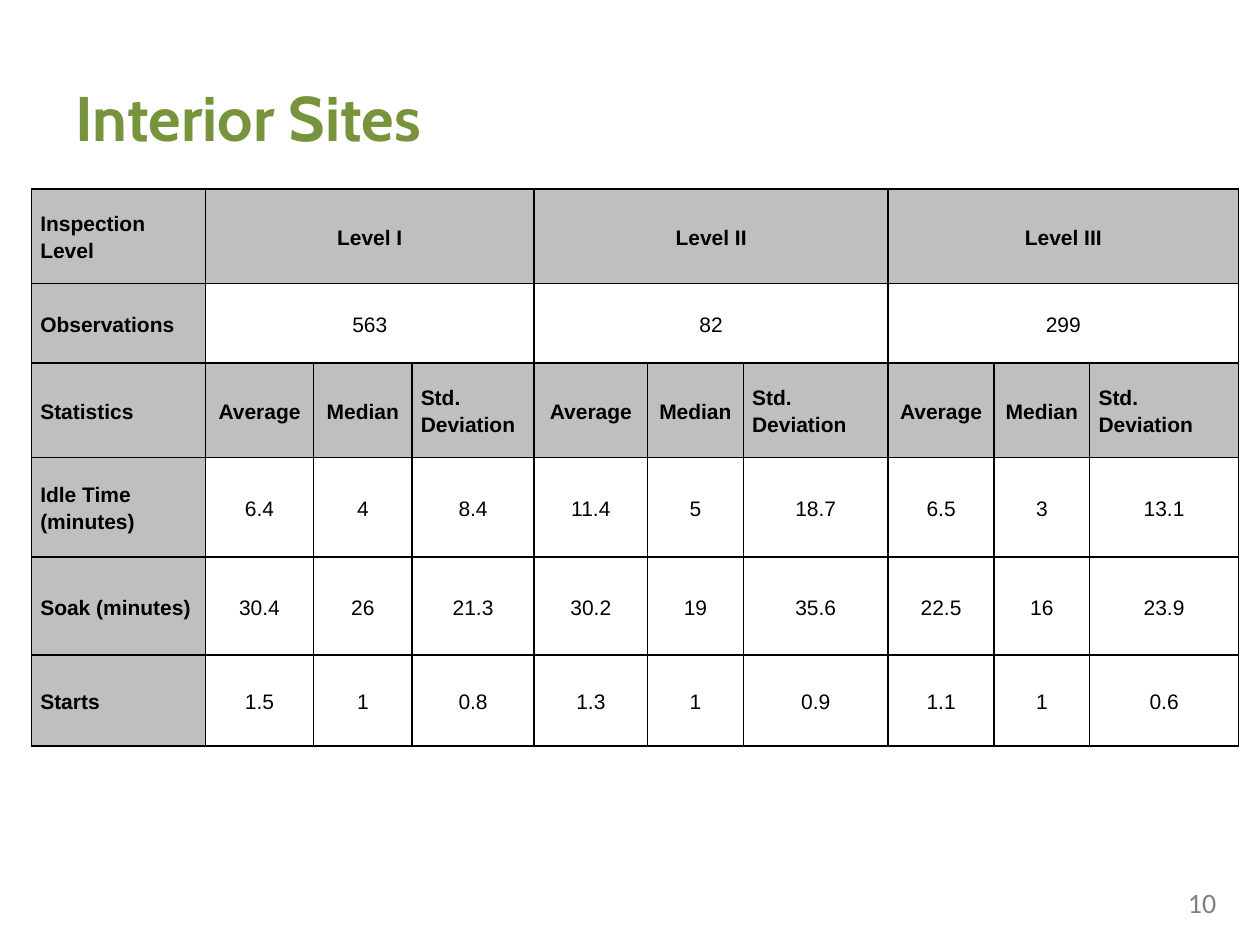
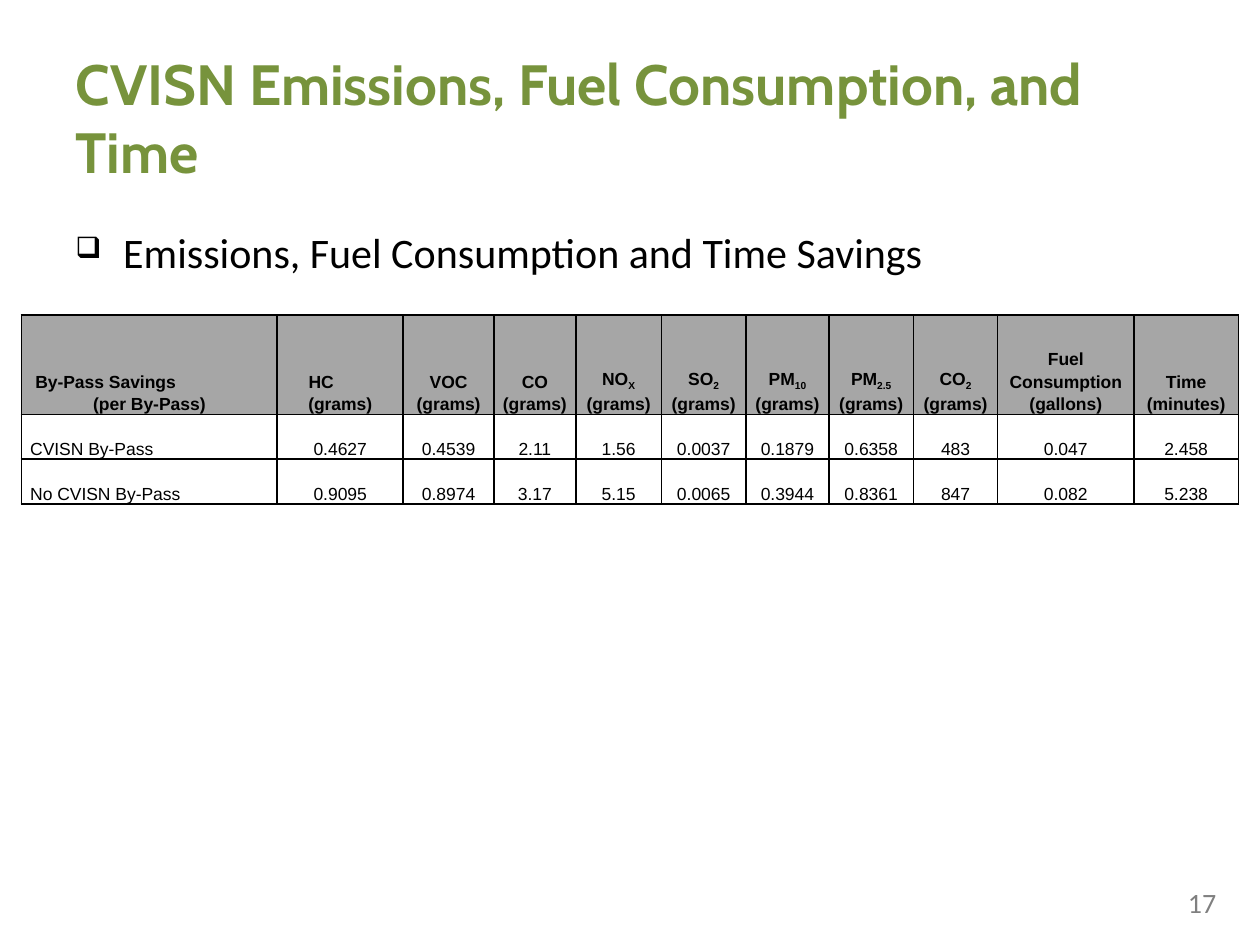
from lxml import etree
from pptx import Presentation
from pptx.dml.color import RGBColor
from pptx.enum.text import MSO_ANCHOR, MSO_AUTO_SIZE, PP_ALIGN
from pptx.oxml.ns import qn
from pptx.util import Inches, Pt

LEFT, CENTER = PP_ALIGN.LEFT, PP_ALIGN.CENTER
MIDDLE, BOTTOM = MSO_ANCHOR.MIDDLE, MSO_ANCHOR.BOTTOM
NO_FIT, GROW = MSO_AUTO_SIZE.NONE, MSO_AUTO_SIZE.SHAPE_TO_FIT_TEXT

GREEN = RGBColor(0x77, 0x93, 0x3C)
BLACK = RGBColor(0x00, 0x00, 0x00)
PAGE_GRAY = RGBColor(0x80, 0x80, 0x80)
LIGHT_GRAY = RGBColor(0xBF, 0xBF, 0xBF)
MID_GRAY = RGBColor(0xA6, 0xA6, 0xA6)

TITLE_FONT, BODY_FONT, TABLE_FONT = "Cabin", "Calibri", "Arial"
SLIDE_WIDTH, SLIDE_HEIGHT = Inches(10), Inches(7.5)
GRID_COLUMNS, GRID_ROWS = 100, 75
TITLE_ONLY = 5
CELL_PADDING = Inches(0.07)


def across(columns):
    return round(SLIDE_WIDTH * columns / GRID_COLUMNS)


def down(rows):
    return round(SLIDE_HEIGHT * rows / GRID_ROWS)


def area(left, top, width, height):
    return across(left), down(top), across(width), down(height)


def style_font(font, name, size, color, bold=False):
    font.name = name
    font.size = Pt(size)
    font.color.rgb = color
    font.bold = bold


def add_label(slide, place, text, size, color):
    label = slide.shapes.add_textbox(*area(*place))
    paragraph = label.text_frame.paragraphs[0]
    paragraph.text = text
    style_font(paragraph.runs[0].font, BODY_FONT, size, color)
    return label


def add_titled_slide(deck, heading, heading_size, page):
    slide = deck.slides.add_slide(deck.slide_layouts[TITLE_ONLY])
    title = slide.shapes.title
    title.left, title.top, title.width, title.height = area(5, 3, 90, 12.5)
    frame = title.text_frame
    frame.text = heading
    frame.auto_size = NO_FIT
    frame.vertical_anchor = MIDDLE
    frame.paragraphs[0].alignment = LEFT
    style_font(frame.paragraphs[0].runs[0].font, TITLE_FONT, heading_size, GREEN, True)
    number = add_label(slide, (93.3, 69.8, 5, 3.7), page, 16, PAGE_GRAY)
    number.text_frame.word_wrap = False
    number.text_frame.auto_size = GROW
    return slide


def set_indent(paragraph, margin, first_line=0):
    properties = paragraph._p.get_or_add_pPr()
    properties.set("marL", str(Inches(margin)))
    properties.set("indent", str(Inches(first_line)))
    return properties


def add_bullet(slide, place, text):
    statement = add_label(slide, place, text, 24, BLACK)
    statement.text_frame.word_wrap = True
    properties = set_indent(statement.text_frame.paragraphs[0], 0.38, -0.38)
    etree.SubElement(properties, qn("a:buSzPct")).set("val", "70000")
    etree.SubElement(properties, qn("a:buChar")).set("char", "❑")


def add_borders(cell):
    properties = cell._tc.get_or_add_tcPr()
    for side in ("lnL", "lnR", "lnT", "lnB"):
        border = etree.SubElement(properties, qn(f"a:{side}"), w=str(Pt(1)))
        fill = etree.SubElement(border, qn("a:solidFill"))
        etree.SubElement(fill, qn("a:srgbClr"), val=str(BLACK))


def write_with_subscripts(paragraph, text):
    for index, part in enumerate(text.split("_")):
        run = paragraph.add_run()
        run.text = part
        if index % 2:
            run._r.get_or_add_rPr().set("baseline", "-25000")


def fill_cell(cell, text, size, anchor, alignment, header_fill):
    cell.margin_left = cell.margin_right = CELL_PADDING
    cell.margin_top = cell.margin_bottom = 0
    cell.vertical_anchor = anchor
    add_borders(cell)
    if header_fill:
        cell.fill.solid()
        cell.fill.fore_color.rgb = header_fill
    else:
        cell.fill.background()
    for index, line in enumerate((text or "").split("\n")):
        frame = cell.text_frame
        paragraph = frame.add_paragraph() if index else frame.paragraphs[0]
        paragraph.alignment = alignment
        paragraph.line_spacing = 1.15
        write_with_subscripts(paragraph, line)
        for run in paragraph.runs:
            style_font(run.font, TABLE_FONT, size, BLACK, bool(header_fill))


def add_data_table(slide, corner, widths, heights, rows, size, anchor, shade, is_header, is_left):
    place = area(*corner, sum(widths), sum(heights))
    table = slide.shapes.add_table(len(heights), len(widths), *place).table
    table.first_row = table.horz_banding = False
    for column, width in zip(table.columns, widths):
        column.width = across(width)
    for row, height in zip(table.rows, heights):
        row.height = down(height)
    for r, values in enumerate(rows):
        for c, text in enumerate(values):
            alignment = LEFT if is_left(r, c) else CENTER
            fill = shade if is_header(r, c) else None
            fill_cell(table.cell(r, c), text, size, anchor, alignment, fill)
    return table


def spread(label, values, span):
    return [label] + [text for value in values for text in [value] + [None] * (span - 1)]


def add_interior_sites(deck):
    slide = add_titled_slide(deck, "Interior Sites", 36, "10")
    statistics = ["Average", "Median", "Std. Deviation"]
    span = len(statistics)
    levels = ["Level I", "Level II", "Level III"]
    rows = [
        spread("Inspection Level", levels, span),
        spread("Observations", ["563", "82", "299"], span),
        ["Statistics"] + statistics * len(levels),
        ["Idle Time (minutes)", "6.4", "4", "8.4", "11.4", "5", "18.7", "6.5", "3", "13.1"],
        ["Soak (minutes)", "30.4", "26", "21.3", "30.2", "19", "35.6", "22.5", "16", "23.9"],
        ["Starts", "1.5", "1", "0.8", "1.3", "1", "0.9", "1.1", "1", "0.6"],
    ]
    table = add_data_table(
        slide, (2.5, 15),
        [13.8, 8.6, 7.8, 9.7, 9, 7.6, 11.5, 8.4, 7.6, 11.8],
        [7.5, 6.3, 7.5, 7.9, 7.8, 7.2],
        rows, 12, MIDDLE, LIGHT_GRAY,
        is_header=lambda r, c: c == 0 or r in (0, 2),
        is_left=lambda r, c: c == 0 or (r == 2 and c % span == 0),
    )
    for r in (0, 1):
        for first in range(1, len(rows[0]), span):
            table.cell(r, first).merge(table.cell(r, first + span - 1))


def add_emissions(deck):
    slide = add_titled_slide(deck, "CVISN Emissions, Fuel Consumption, and Time", 32.4, "17")
    add_bullet(slide, (5, 17.5, 90, 6.7), "Emissions, Fuel Consumption and Time Savings")
    pollutants = ["VOC", "CO", "NO_X_", "SO_2_", "PM_10_", "PM_2.5_", "CO_2_"]
    rows = [
        ["By-Pass Savings\n(per By-Pass)", "HC\n(grams)"]
        + [f"{pollutant} (grams)" for pollutant in pollutants]
        + ["Fuel Consumption (gallons)", "Time (minutes)"],
        ["CVISN By-Pass", "0.4627", "0.4539", "2.11", "1.56", "0.0037",
         "0.1879", "0.6358", "483", "0.047", "2.458"],
        ["No CVISN By-Pass", "0.9095", "0.8974", "3.17", "5.15", "0.0065",
         "0.3944", "0.8361", "847", "0.082", "5.238"],
    ]
    table = add_data_table(
        slide, (1.7, 25),
        [20.3, 10, 7.2, 6.5, 6.8, 6.7, 6.6, 6.7, 6.7, 10.8, 8.3],
        [7.9, 3.55, 3.55],
        rows, 10, BOTTOM, MID_GRAY,
        is_header=lambda r, c: r == 0,
        is_left=lambda r, c: r > 0 and c == 0,
    )
    for column, margin in enumerate((0.04, 0.18)):
        lead = table.cell(0, column).text_frame.paragraphs[0]
        lead.alignment = LEFT
        set_indent(lead, margin)


def main():
    deck = Presentation()
    deck.slide_width, deck.slide_height = SLIDE_WIDTH, SLIDE_HEIGHT
    add_interior_sites(deck)
    add_emissions(deck)
    deck.save("out.pptx")


if __name__ == "__main__":
    main()
